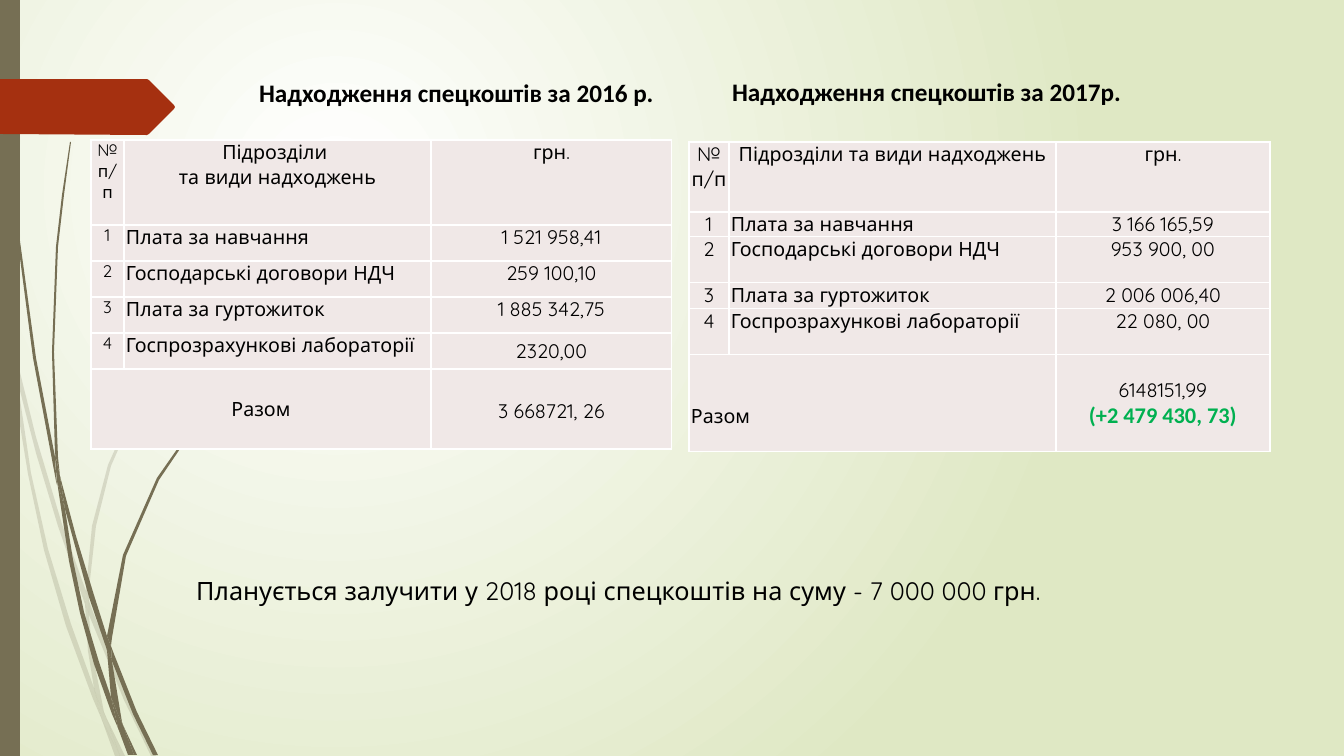
from lxml import etree
from pptx import Presentation
from pptx.dml.color import RGBColor
from pptx.enum.shapes import MSO_SHAPE
from pptx.enum.text import MSO_ANCHOR, MSO_AUTO_SIZE, PP_ALIGN
from pptx.oxml import parse_xml
from pptx.oxml.ns import nsdecls, qn
from pptx.util import Emu, Pt

LEFT, CENTER = PP_ALIGN.LEFT, PP_ALIGN.CENTER
TOP, MIDDLE, BOTTOM = MSO_ANCHOR.TOP, MSO_ANCHOR.MIDDLE, MSO_ANCHOR.BOTTOM
RECTANGLE = MSO_SHAPE.RECTANGLE
NO_AUTOFIT = MSO_AUTO_SIZE.NONE
BLACK = RGBColor(0x00, 0x00, 0x00)
WHITE = RGBColor(0xFF, 0xFF, 0xFF)
PALE_GREEN = RGBColor(0xDF, 0xE8, 0xC4)
OLIVE = RGBColor(0x76, 0x6F, 0x54)
RUST = RGBColor(0xA5, 0x30, 0x10)
BLUSH = RGBColor(0xF0, 0xE8, 0xE7)
GREEN = RGBColor(0x00, 0xB0, 0x50)
SCALE = 12192000 / 1344


def px(*lengths):
    return [Emu(round(length * SCALE)) for length in lengths]


def write(frame, text, size=14, font="Quicksand", color=BLACK, bold=False, align=LEFT):
    for line in text.split("\n"):
        paragraph = frame.add_paragraph() if frame.text else frame.paragraphs[0]
        paragraph.alignment = align
        run = paragraph.add_run()
        run.text = line
        run.font.size = Pt(size)
        run.font.name = font
        run.font.bold = bold
        run.font.color.rgb = color


deck = Presentation()
deck.slide_width, deck.slide_height = px(1344, 756)
slide = deck.slides.add_slide(deck.slide_layouts[5])

backdrop = slide.background.fill
backdrop.gradient()
for stop, color in zip(backdrop.gradient_stops, (WHITE, PALE_GREEN)):
    stop.color.rgb = color
gradient = slide.background._cSld.find(".//" + qn("a:gradFill"))
gradient.replace(gradient.find(qn("a:lin")), parse_xml(
    f'<a:path {nsdecls("a")} path="circle">'
    '<a:fillToRect l="50000" t="50000" r="100000" b="100000"/></a:path>'))

side_band = slide.shapes.add_shape(RECTANGLE, *px(0, 0, 20, 756))
side_band.shadow.inherit = False
side_band.line.fill.background()
side_band.fill.solid()
side_band.fill.fore_color.rgb = OLIVE

pale_blades = [
    [(11, 353), (9, 325), (0, 284), (0, 301), (10, 347)],
    [(58, 526), (85, 604), (86, 591), (62, 524), (36, 437), (14, 348), (17, 379), (36, 453)],
    [(93, 612), (89, 601), (89, 615), (124, 700), (151, 756), (156, 756), (128, 698)],
    [(120, 756), (125, 756), (106, 717)],
    [(94, 688), (71, 624), (48, 549), (31, 473), (17, 379), (11, 353), (18, 413),
     (28, 474), (44, 550), (66, 626), (93, 699), (102, 720), (100, 713)],
    [(85, 604), (88, 651), (94, 688), (97, 698), (106, 717), (104, 712), (92, 651),
     (89, 615), (89, 613)],
    [(89, 589), (96, 526), (111, 466), (161, 352), (231, 247), (270, 200), (292, 176),
     (314, 155), (314, 154), (291, 176), (270, 199), (230, 246), (159, 351),
     (108, 465), (92, 526), (86, 589), (86, 591), (89, 601)],
    [(102, 720), (115, 756), (120, 756)],
    [(89, 613), (89, 615), (89, 601), (86, 591), (85, 604)],
    [(97, 698), (94, 688), (100, 713), (102, 720), (120, 756), (106, 717)],
]
dark_blades = [
    [(7, 111), (17, 235), (33, 358), (56, 481), (57, 485), (55, 461), (55, 457),
     (36, 358), (19, 234), (8, 110), (5, 48), (4, 0), (3, 0), (4, 48)],
    [(89, 597), (107, 650), (107, 638), (107, 636), (94, 595), (76, 536), (60, 476),
     (65, 509)],
    [(114, 654), (111, 646), (112, 661), (133, 714), (153, 755), (158, 755), (137, 712)],
    [(111, 697), (99, 662), (84, 612), (73, 560), (65, 509), (57, 481), (69, 561),
     (80, 613), (94, 664), (112, 714), (118, 728), (117, 723)],
    [(60, 476), (58, 457), (54, 352), (58, 247), (64, 195), (71, 142), (70, 142),
     (62, 195), (56, 247), (52, 352), (55, 453)],
    [(134, 755), (137, 755), (123, 725)],
    [(57, 481), (65, 509), (60, 476), (55, 453), (55, 457)],
    [(112, 638), (126, 556), (159, 480), (207, 409), (233, 377), (247, 362), (263, 347),
     (262, 347), (247, 361), (233, 376), (206, 408), (157, 478), (123, 555),
     (107, 636), (111, 646)],
    [(118, 728), (128, 755), (132, 755)],
    [(107, 650), (111, 697), (117, 712), (123, 725), (122, 722), (112, 661), (110, 656)],
    [(107, 650), (110, 656), (112, 661), (111, 646), (107, 636), (107, 638)],
    [(117, 712), (111, 697), (117, 723), (118, 728), (131, 755), (134, 755), (123, 725)],
]
page_arrow = [(0, 79), (147, 79), (149, 80), (174, 105), (175, 107), (174, 109),
              (149, 134), (147, 135), (0, 134)]
for outlines, color, opacity in ((pale_blades, OLIVE, 20), (dark_blades, OLIVE, 100),
                                 ([page_arrow], RUST, 100)):
    for outline in outlines:
        builder = slide.shapes.build_freeform(*outline[0], scale=SCALE)
        builder.add_line_segments(outline[1:], close=True)
        ornament = builder.convert_to_shape()
        ornament.shadow.inherit = False
        ornament.line.fill.background()
        ornament.fill.solid()
        ornament.fill.fore_color.rgb = color
        if opacity < 100:
            tint = ornament._element.spPr.find(".//" + qn("a:srgbClr"))
            etree.SubElement(tint, qn("a:alpha"), val=str(opacity * 1000))

heading_2016 = slide.shapes.title
heading_2017 = slide.shapes.add_textbox(0, 0, 0, 0)
plan_2018 = slide.shapes.add_textbox(0, 0, 0, 0)
captions = [
    (heading_2016, (200, 72, 500, 72), 59, TOP, "Calibri", True,
     "Надходження спецкоштів за 2016 р."),
    (heading_2017, (673, 71, 473, 40), 59, TOP, "Calibri", True,
     "Надходження спецкоштів за 2017р."),
    (plan_2018, (186, 509, 909, 102), 10, BOTTOM, "Quicksand", False,
     "Планується залучити у 2018 році спецкоштів на суму - 7 000 000 грн."),
]
for caption, box, inset, anchor, font, bold, text in captions:
    caption.left, caption.top, caption.width, caption.height = px(*box)
    frame = caption.text_frame
    frame.word_wrap = True
    frame.auto_size = NO_AUTOFIT
    frame.vertical_anchor = anchor
    frame.margin_left, frame.margin_top, frame.margin_bottom = px(inset, 5, 5)
    write(frame, text, size=18, font=font, bold=bold)

sources = ["Плата за навчання", "Господарські договори НДЧ",
           "Плата за гуртожиток", "Госпрозрахункові лабораторії"]
incomes = [
    dict(corner=(91, 140), columns=(33, 307, 241), rows=(85, 36, 36, 36, 36, 80),
         heading="Підрозділи \nта види надходжень", number_size=12,
         amounts=["1 521 958,41", "259 100,10", "1 885 342,75", "2320,00"],
         total="3 668721, 26", growth="", middle_rows=(4, 5),
         total_align=CENTER, total_drops=(0, 4)),
    dict(corner=(689, 142), columns=(40, 327, 214), rows=(70, 23, 46, 26, 46, 97),
         heading="Підрозділи та види надходжень", number_size=14,
         amounts=["3 166 165,59", "953 900, 00", "2 006 006,40", "22 080, 00"],
         total="6148151,99", growth="(+2 479 430, 73)", middle_rows=(5,),
         total_align=LEFT, total_drops=(26, 2)),
]
for income in incomes:
    columns, rows = income["columns"], income["rows"]
    table = slide.shapes.add_table(
        len(rows), len(columns),
        *px(*income["corner"], sum(columns), sum(rows))).table
    for column, width in zip(table.columns, px(*columns)):
        column.width = width
    for row, height in zip(table.rows, px(*rows)):
        row.height = height
    lines = [("№ п/п", income["heading"], "грн.")]
    lines += [(str(number), source, amount) for number, (source, amount)
              in enumerate(zip(sources, income["amounts"]), 1)]
    lines.append(("Разом", "", income["total"]))
    table.cell(5, 0).merge(table.cell(5, 1))
    for r, line in enumerate(lines):
        for c, text in enumerate(line):
            cell = table.cell(r, c)
            cell.margin_left, cell.margin_right = px(2, 2)
            cell.margin_top = cell.margin_bottom = 0
            cell.vertical_anchor = MIDDLE if r == 5 or (
                c == 2 and r in income["middle_rows"]) else TOP
            for side in ("lnL", "lnR", "lnT", "lnB"):
                cell._tc.get_or_add_tcPr().append(parse_xml(
                    f'<a:{side} {nsdecls("a")} w="12700"><a:solidFill>'
                    f'<a:srgbClr val="{WHITE}"/></a:solidFill></a:{side}>'))
            cell.fill.solid()
            cell.fill.fore_color.rgb = BLUSH
            if text:
                align = LEFT if c == 1 and r else CENTER
                write(cell.text_frame, text,
                      size=income["number_size"] if c == 0 and r < 5 else 14,
                      align=income["total_align"] if (r, c) == (5, 0) else align)
    table.cell(5, 0).margin_top, table.cell(5, 2).margin_top = px(*income["total_drops"])
    if income["growth"]:
        write(table.cell(5, 2).text_frame, income["growth"], size=16,
              font="Calibri", color=GREEN, bold=True, align=CENTER)

deck.save("out.pptx")
